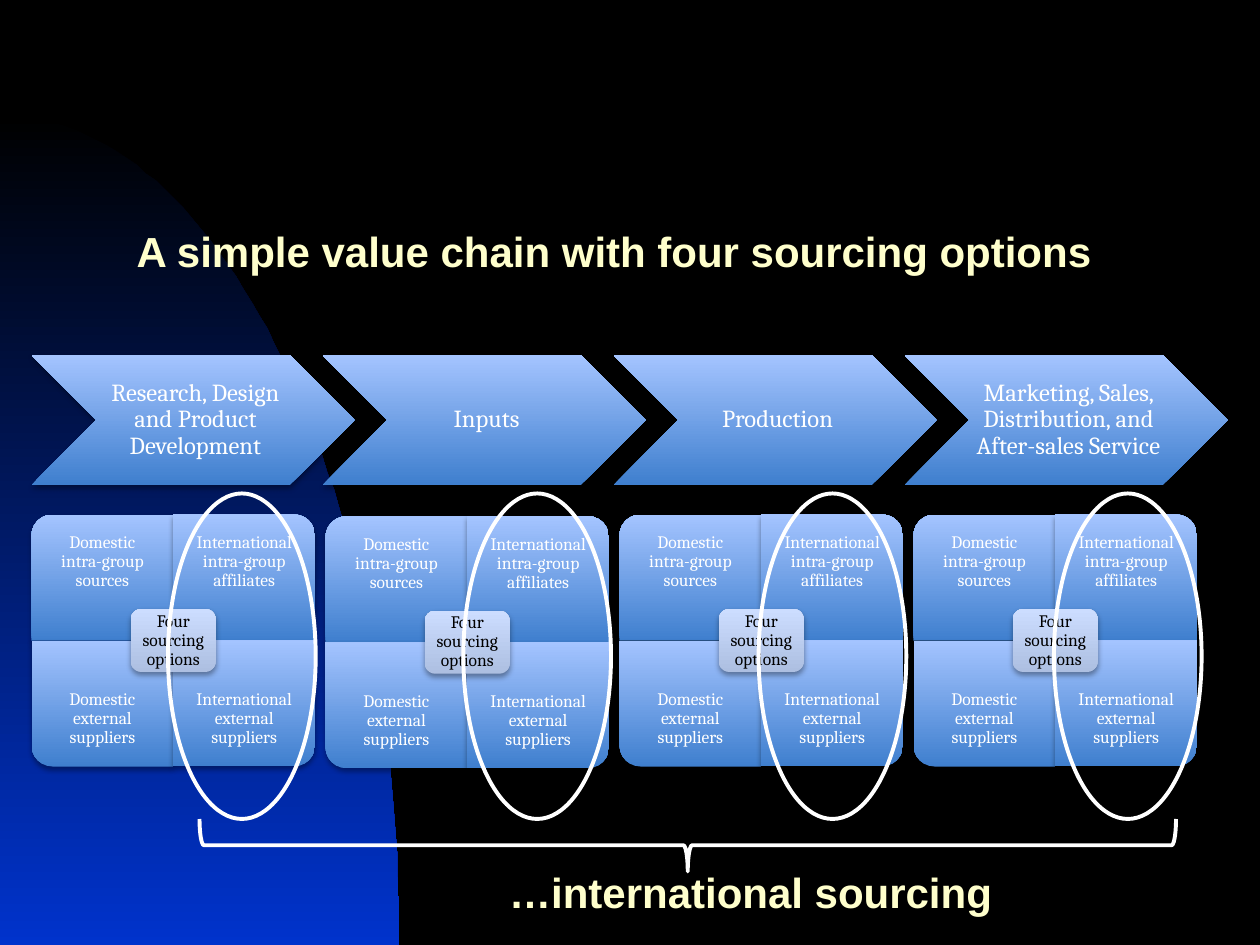
"""Build a value chain slide with four sourcing options per stage."""
from dataclasses import dataclass

from lxml import etree
from pptx import Presentation
from pptx.dml.color import RGBColor
from pptx.enum.shapes import MSO_SHAPE
from pptx.enum.text import MSO_ANCHOR, PP_ALIGN
from pptx.oxml.ns import qn
from pptx.util import Pt

CHEVRON, ELLIPSE, BRACE = MSO_SHAPE.CHEVRON, MSO_SHAPE.OVAL, MSO_SHAPE.LEFT_BRACE
ROUNDED, ONE_ROUNDED = MSO_SHAPE.ROUNDED_RECTANGLE, MSO_SHAPE.ROUND_1_RECTANGLE
MIDDLE, CENTER = MSO_ANCHOR.MIDDLE, PP_ALIGN.CENTER

COLORS = {
    "black": "000000", "white": "FFFFFF", "cream": "FFFFCC", "royal": "0033CC",
    "deep": "3F7FCE", "light": "A4C4FF", "hub_deep": "ADBFE1", "hub_light": "CCDDFF",
}
STAGES = (
    "Research, Design and Product Development",
    "Inputs",
    "Production",
    "Marketing, Sales, Distribution, and After-sales Service",
)
LEFT = 18
STAGE_PITCH, MATRIX_PITCH, ELLIPSE_PITCH = 166.3, 168, 168.75
MATRIX_TOPS = (294, 295, 294, 294)
QUADRANT_W, QUADRANT_H, LABEL_H = 81, 72, 54
HUB_W, HUB_H = 48.6, 36


@dataclass(frozen=True)
class Box:
    left: float
    top: float
    width: float
    height: float


@dataclass(frozen=True)
class TextStyle:
    font: str
    size: float
    color: str
    bold: bool = False
    spacing: float = 0.9
    margins: tuple = (5.4, 5.4, 5.4, 5.4)


@dataclass(frozen=True)
class Quadrant:
    text: str
    column: int
    row: int
    rotation: int


STAGE_STYLE = TextStyle("Cambria", 14, "white", margins=(4, 1.33, 1.33, 1.33))
OPTION_STYLE = TextStyle("Cambria", 10, "white")
HUB_STYLE = TextStyle("Cambria", 10, "black", margins=(3, 3, 3, 3))
HEADING_STYLE = TextStyle("Arial", 24, "cream", True, 0.7, (7.2, 3.6, 7.2, 3.6))

QUADRANTS = (
    Quadrant("Domestic\vintra-group sources", 0, 0, 270),
    Quadrant("International intra-group affiliates", 1, 0, 0),
    Quadrant("Domestic external suppliers", 0, 1, 180),
    Quadrant("International\nexternal suppliers", 1, 1, 90),
)


def rgb(name: str) -> RGBColor:
    """Return the named colour."""
    return RGBColor.from_string(COLORS[name])


def points(box: Box) -> tuple:
    """Return the box as four lengths."""
    return Pt(box.left), Pt(box.top), Pt(box.width), Pt(box.height)


def write(shape, text: str, style: TextStyle) -> None:
    """Write centred text into a shape."""
    frame = shape.text_frame
    frame.word_wrap = True
    frame.vertical_anchor = MIDDLE
    (frame.margin_left, frame.margin_top,
     frame.margin_right, frame.margin_bottom) = map(Pt, style.margins)
    frame.text = text
    for paragraph in frame.paragraphs:
        paragraph.alignment = CENTER
        paragraph.line_spacing = style.spacing
        font = paragraph.font
        font.name, font.size, font.bold = style.font, Pt(style.size), style.bold
        font.color.rgb = rgb(style.color)


def add_label(slide, box: Box, text: str, style: TextStyle) -> None:
    """Add a text box."""
    write(slide.shapes.add_textbox(*points(box)), text, style)


def fill_gradient(shape, start: str, end: str, angle: int) -> None:
    """Fill a shape with an upright two-colour gradient and no line."""
    shape.fill.gradient()
    shape.fill.gradient_angle = angle
    for stop, name in zip(shape.fill.gradient_stops, (start, end)):
        stop.color.rgb = rgb(name)
    shape._element.spPr.find(qn("a:gradFill")).set("rotWithShape", "0")
    shape.line.fill.background()
    shape.shadow.inherit = False


def add_shadow(shape) -> None:
    """Add a soft shadow below a shape."""
    effects = shape._element.spPr.find(qn("a:effectLst"))
    shadow = etree.SubElement(
        effects, qn("a:outerShdw"), blurRad=str(Pt(3.1)), dist=str(Pt(1.8)),
        dir="5400000", rotWithShape="0")
    color = etree.SubElement(shadow, qn("a:srgbClr"), val=COLORS["black"])
    etree.SubElement(color, qn("a:alpha"), val="35000")


def add_tile(slide, kind, box: Box, start: str = "deep", end: str = "light",
             rotation: int = 0):
    """Add a shaded shape; a quarter turn keeps the outer box."""
    if rotation % 180:
        shift = (box.width - box.height) / 2
        box = Box(box.left + shift, box.top - shift, box.height, box.width)
    tile = slide.shapes.add_shape(kind, *points(box))
    tile.rotation = rotation
    fill_gradient(tile, start, end, 90)
    add_shadow(tile)
    return tile


def add_outline(slide, kind, box: Box, rotation: int = 0) -> None:
    """Add an unfilled white outline."""
    outline = slide.shapes.add_shape(kind, *points(box))
    outline.rotation = rotation
    outline.fill.background()
    outline.line.color.rgb = rgb("white")
    outline.line.width = Pt(2.25)
    outline.shadow.inherit = False


def add_backdrop(slide, steps: int = 60) -> None:
    """Add the curved blue area along the left edge."""
    curve = []
    for step in range(1, steps + 1):
        t = step / steps
        u = 1 - t
        curve.append((3 * u * u * t * 126 + 3 * u * t * t * 228 + t ** 3 * 228,
                      (u ** 3 + 3 * u * u * t) * 66 + 3 * u * t * t * 279 + t ** 3 * 540))
    builder = slide.shapes.build_freeform(0, 66, scale=float(Pt(1)))
    builder.add_line_segments(curve + [(0, 540)], close=True)
    fill_gradient(builder.convert_to_shape(), "black", "royal", 270)


def add_matrix(slide, left: float, top: float) -> None:
    """Add the four sourcing options around their hub."""
    for option in QUADRANTS:
        x = left + option.column * QUADRANT_W
        y = top + option.row * QUADRANT_H
        add_tile(slide, ONE_ROUNDED, Box(x, y, QUADRANT_W, QUADRANT_H),
                 rotation=option.rotation)
        label_top = y + option.row * (QUADRANT_H - LABEL_H)
        add_label(slide, Box(x, label_top, QUADRANT_W, LABEL_H), option.text, OPTION_STYLE)
    hub = Box(left + QUADRANT_W - HUB_W / 2, top + QUADRANT_H - HUB_H / 2, HUB_W, HUB_H)
    write(add_tile(slide, ROUNDED, hub, "hub_deep", "hub_light"),
          "Four sourcing options", HUB_STYLE)


def main() -> None:
    """Build and save the slide."""
    deck = Presentation()
    deck.slide_width, deck.slide_height = Pt(720), Pt(540)
    slide = deck.slides.add_slide(deck.slide_layouts[6])
    slide.background.fill.solid()
    slide.background.fill.fore_color.rgb = rgb("black")
    add_backdrop(slide)
    add_label(slide, Box(48, 102, 606, 90),
              "A simple value chain with four sourcing options", HEADING_STYLE)
    for index, stage in enumerate(STAGES):
        chevron = Box(LEFT + index * STAGE_PITCH, 203, 184.8, 74)
        write(add_tile(slide, CHEVRON, chevron), stage, STAGE_STYLE)
    for index, top in enumerate(MATRIX_TOPS):
        add_matrix(slide, LEFT + index * MATRIX_PITCH, top)
    for index in range(len(STAGES)):
        add_outline(slide, ELLIPSE, Box(96 + index * ELLIPSE_PITCH, 282, 84.4, 186))
    add_outline(slide, BRACE, Box(378, 204, 30, 558), rotation=270)
    add_label(slide, Box(126, 480, 606, 66), "…international sourcing", HEADING_STYLE)
    deck.save("out.pptx")


if __name__ == "__main__":
    main()
